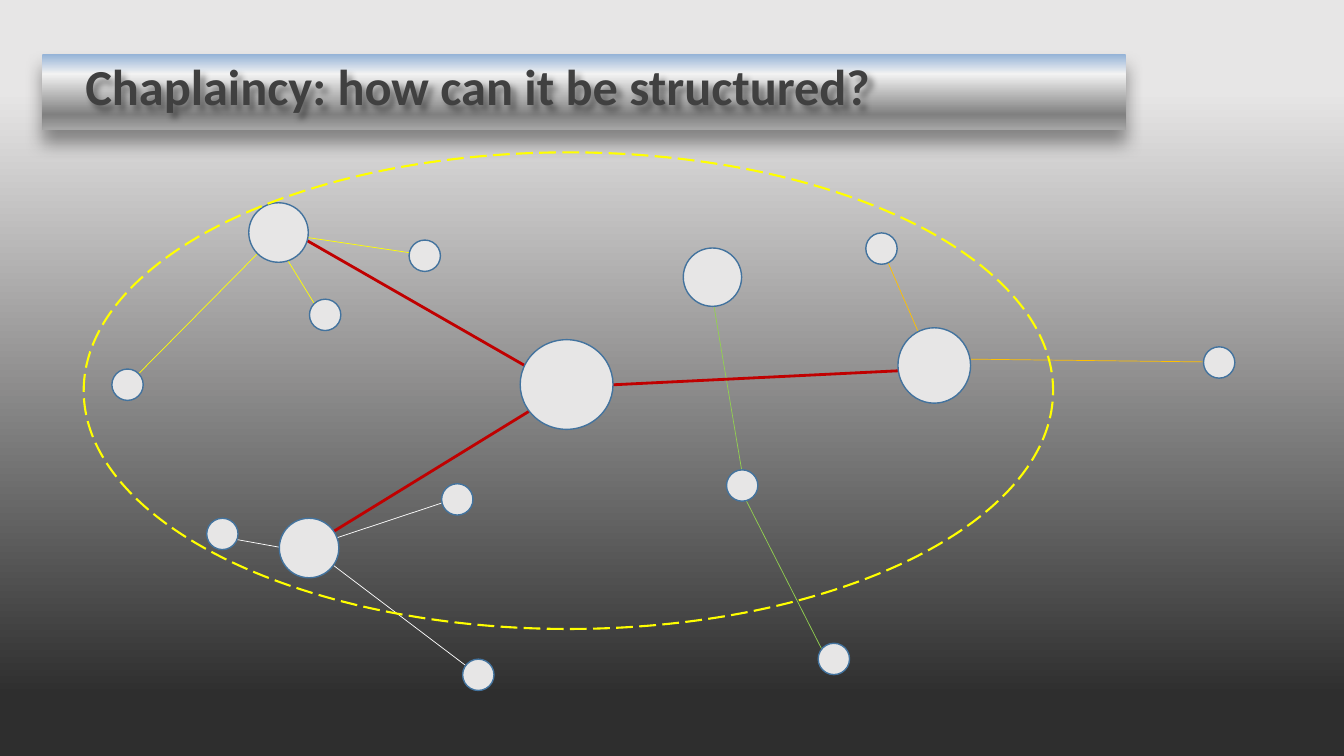
from dataclasses import dataclass

from lxml import etree
from pptx import Presentation
from pptx.dml.color import RGBColor
from pptx.dml.fill import FillFormat
from pptx.enum.dml import MSO_LINE
from pptx.enum.shapes import MSO_CONNECTOR, MSO_SHAPE
from pptx.enum.text import MSO_ANCHOR, PP_ALIGN
from pptx.oxml.ns import qn
from pptx.shapes.autoshape import Shape
from pptx.slide import Slide
from pptx.util import Cm, Pt

STRAIGHT = MSO_CONNECTOR.STRAIGHT
OVAL = MSO_SHAPE.OVAL
RECTANGLE = MSO_SHAPE.RECTANGLE
LONG_DASH = MSO_LINE.LONG_DASH
LEFT = PP_ALIGN.LEFT
TOP = MSO_ANCHOR.TOP

COLORS = {
    "light": "E7E6E6",
    "dark": "2E2E2E",
    "outline": "43739E",
    "yellow": "FFFF00",
    "amber": "FFC000",
    "green": "92D050",
    "white": "FFFFFF",
    "red": "C00000",
    "title": "404040",
    "shadow": "000000",
    "bar_blue": "95B3D7",
    "bar_pale": "F2F2F2",
    "bar_gray": "808080",
    "bar_silver": "A6A6A6",
}
SMALL = 0.79
MEDIUM = 1.5


@dataclass
class Link:
    color: str
    x1: float
    y1: float
    x2: float
    y2: float
    weight: float = 0.5


@dataclass
class Node:
    left: float
    top: float
    width: float = SMALL
    height: float = SMALL


LINKS = [
    Link("white", 11.51, 12.55, 7.98, 13.72),
    Link("white", 5.21, 13.46, 8.05, 13.97),
    Link("white", 7.8, 13.79, 12.37, 17.25),
    Link("yellow", 6.98, 5.87, 10.54, 6.4),
    Link("yellow", 3.51, 9.4, 6.5, 6.38),
    Link("yellow", 7.92, 7.65, 6.98, 6.12),
    Link("amber", 22.22, 6.25, 23.55, 9.3),
    Link("amber", 23.52, 9.04, 30.33, 9.12),
    Link("green", 18.49, 11.99, 21.03, 16.99),
    Link("green", 17.86, 6.93, 18.69, 11.84),
    Link("red", 8.05, 13.61, 14.25, 9.8, 2),
    Link("red", 14.35, 9.75, 23.52, 9.3, 2),
    Link("red", 7.49, 5.92, 14.25, 9.8, 2),
]

NODES = [
    Node(2.82, 9.3),
    Node(10.31, 6.05),
    Node(7.8, 7.54),
    Node(5.21, 13.06),
    Node(18.31, 11.84),
    Node(11.13, 12.19),
    Node(30.33, 8.74),
    Node(11.66, 16.61),
    Node(21.82, 5.87),
    Node(20.62, 16.21),
    Node(13.11, 8.56, 2.34, 2.26),
    Node(6.27, 5.11, MEDIUM, MEDIUM),
    Node(7.04, 13.06, MEDIUM, MEDIUM),
    Node(22.63, 8.26, 1.83, 1.9),
    Node(17.22, 6.25, 1.47, 1.47),
]


def rgb(name: str) -> RGBColor:
    return RGBColor.from_string(COLORS[name])


def set_gradient(fill: FillFormat, root: etree.ElementBase, stops: list[tuple[int, str]]) -> None:
    fill.gradient()
    fill.gradient_angle = 270
    stop_list = next(root.iter(qn("a:gsLst")))
    for stop in list(stop_list):
        stop_list.remove(stop)
    for percent, name in stops:
        stop = etree.SubElement(stop_list, qn("a:gs"), pos=str(percent * 1000))
        etree.SubElement(stop, qn("a:srgbClr"), val=COLORS[name])


def set_shadow(shape: Shape, blur: float, distance: float, angle: int) -> None:
    shape.shadow.inherit = False
    effects = next(shape._element.iter(qn("a:effectLst")))
    shadow = etree.SubElement(
        effects, qn("a:outerShdw"), blurRad=str(Pt(blur)), dist=str(Pt(distance)),
        dir=str(angle * 60000), algn="tl", rotWithShape="0",
    )
    color = etree.SubElement(shadow, qn("a:srgbClr"), val=COLORS["shadow"])
    etree.SubElement(color, qn("a:alpha"), val="40000")


def draw_link(page: Slide, link: Link) -> None:
    connector = page.shapes.add_connector(
        STRAIGHT, Cm(link.x1), Cm(link.y1), Cm(link.x2), Cm(link.y2)
    )
    connector.line.color.rgb = rgb(link.color)
    connector.line.width = Pt(link.weight)
    etree.SubElement(connector._element.spPr, qn("a:effectLst"))


def draw_oval(page: Slide, node: Node, line: str, weight: float) -> Shape:
    oval = page.shapes.add_shape(
        OVAL, Cm(node.left), Cm(node.top), Cm(node.width), Cm(node.height)
    )
    oval.shadow.inherit = False
    oval.fill.solid()
    oval.fill.fore_color.rgb = rgb("light")
    oval.line.color.rgb = rgb(line)
    oval.line.width = Pt(weight)
    return oval


def draw_title(page: Slide) -> None:
    bar = page.shapes.add_shape(RECTANGLE, Cm(1.07), Cm(1.37), Cm(27.3), Cm(1.9))
    set_gradient(
        bar.fill, bar._element,
        [(0, "bar_blue"), (26, "bar_pale"), (80, "bar_gray"), (100, "bar_silver")],
    )
    bar.line.fill.background()
    set_shadow(bar, 12, 9, 90)

    box = page.shapes.add_textbox(Cm(1.9), Cm(1.27), Cm(20.32), Cm(1.45))
    set_shadow(box, 5, 4, 45)
    frame = box.text_frame
    frame.word_wrap = False
    frame.vertical_anchor = TOP
    frame.text = "Chaplaincy: how can it be structured?"
    para = frame.paragraphs[0]
    para.alignment = LEFT
    font = para.runs[0].font
    font.name = "Calibri"
    font.size = Pt(36)
    font.bold = True
    font.color.rgb = rgb("title")


def main() -> None:
    deck = Presentation()
    deck.slide_width = Cm(33.87)
    deck.slide_height = Cm(19.05)
    page = deck.slides.add_slide(deck.slide_layouts[6])
    set_gradient(page.background.fill, page._element, [(12, "light"), (92, "dark")])

    for link in LINKS:
        draw_link(page, link)
    draw_title(page)
    for node in NODES:
        draw_oval(page, node, "outline", 1)
    boundary = draw_oval(page, Node(2.11, 3.84, 24.43, 12.01), "yellow", 1.5)
    boundary.fill.background()
    boundary.line.dash_style = LONG_DASH

    deck.save("out.pptx")


if __name__ == "__main__":
    main()
